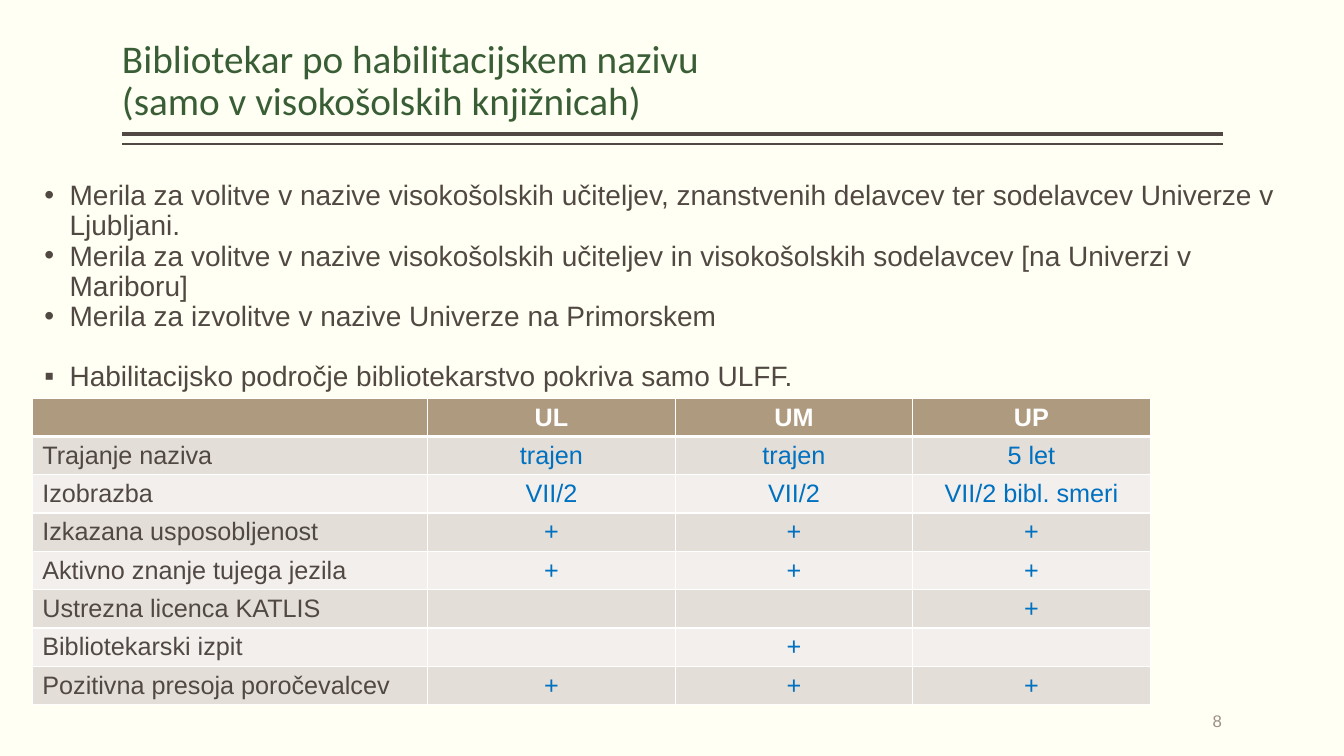
from lxml import etree
from pptx import Presentation
from pptx import util as u
from pptx.dml.color import RGBColor
from pptx.enum import shapes, text
from pptx.oxml import ns

INK, BLUE, WHITE = "514843", "0070C0", "FFFFFF"
LEFT, RIGHT = 1.21, 12.13


def style(para, size, color, font="Arial", bold=False):
    """Format every run of a paragraph."""
    for run in para.runs:
        run.font.size, run.font.name, run.font.bold = u.Pt(size), font, bold
        run.font.color.rgb = RGBColor.from_string(color)


def box(x, y, w, h, anchor):
    """Add a wrapping text box without side insets; return its frame."""
    frame = slide.shapes.add_textbox(*map(u.Inches, (x, y, w, h))).text_frame
    frame.word_wrap = True
    frame.margin_left = frame.margin_right = 0
    frame.vertical_anchor = anchor
    return frame


deck = Presentation()
deck.slide_width, deck.slide_height = u.Inches(13.33), u.Inches(7.5)
slide = deck.slides.add_slide(deck.slide_layouts[6])
back = slide.background.fill
back.solid()
back.fore_color.rgb = RGBColor.from_string("FFFFF3")

# Double rule under the title
for y, width in ((1.33, 3), (1.43, 1)):
    rule = slide.shapes.add_connector(
        shapes.MSO_CONNECTOR.STRAIGHT,
        u.Inches(RIGHT), u.Inches(y), u.Inches(LEFT), u.Inches(y))
    rule.line.width = u.Pt(width)
    rule.line.color.rgb = RGBColor.from_string(INK)
    etree.SubElement(rule._element.spPr, ns.qn("a:effectLst"))

title = box(LEFT, 0.08, RIGHT - LEFT, 1.2, text.MSO_ANCHOR.BOTTOM).paragraphs[0]
title.text = "Bibliotekar po habilitacijskem nazivu\v(samo v visokošolskih knjižnicah)"
title.line_spacing = 0.9
style(title, 28, "395E36", "Calibri")

# Bullets: mark, space before in points, wording
items = [
    ("•", 0, "Merila za volitve v nazive visokošolskih učiteljev, znanstvenih "
             "delavcev ter sodelavcev Univerze v Ljubljani."),
    ("•", 0, "Merila za volitve v nazive visokošolskih učiteljev in "
             "visokošolskih sodelavcev [na Univerzi v Mariboru]"),
    ("•", 0, "Merila za izvolitve v nazive Univerze na Primorskem"),
    ("▪", 21.6, "Habilitacijsko področje bibliotekarstvo pokriva samo ULFF."),
]
body = box(0.44, 1.75, 12.44, 1.9, text.MSO_ANCHOR.TOP)
for i, (mark, gap, words) in enumerate(items):
    para = body.add_paragraph() if i else body.paragraphs[0]
    para.text = words
    para.line_spacing, para.space_before = 0.9, u.Pt(gap)
    style(para, 20, INK)
    props = para._p.get_or_add_pPr()
    props.set("marL", str(u.Inches(0.25)))
    props.set("indent", str(-u.Inches(0.25)))
    etree.SubElement(props, ns.qn("a:buFont"), typeface="Arial")
    etree.SubElement(props, ns.qn("a:buChar"), char=mark)

page = box(RIGHT - 2.01, 6.95, 2, 0.4, text.MSO_ANCHOR.MIDDLE).paragraphs[0]
page.text = "8"
page.alignment = text.PP_ALIGN.RIGHT
style(page, 12, "9D8F88")

rows = [
    ("", "UL", "UM", "UP"),
    ("Trajanje naziva", "trajen", "trajen", "5 let"),
    ("Izobrazba", "VII/2", "VII/2", "VII/2 bibl. smeri"),
    ("Izkazana usposobljenost", "+", "+", "+"),
    ("Aktivno znanje tujega jezila", "+", "+", "+"),
    ("Ustrezna licenca KATLIS", "", "", "+"),
    ("Bibliotekarski izpit", "", "+", ""),
    ("Pozitivna presoja poročevalcev", "+", "+", "+"),
]
wide, high = (3.92, 2.46, 2.35, 2.36), 0.38
table = slide.shapes.add_table(
    len(rows), len(wide), u.Inches(0.32), u.Inches(3.95),
    u.Inches(sum(wide)), u.Inches(high * len(rows))).table
for col, w in zip(table.columns, wide):
    col.width = u.Inches(w)

for r, row in enumerate(rows):
    table.rows[r].height = u.Inches(high)
    for c, words in enumerate(row):
        cell = table.cell(r, c)
        cell.vertical_anchor = text.MSO_ANCHOR.MIDDLE
        cell.margin_top = cell.margin_bottom = u.Inches(0.04)
        para = cell.text_frame.paragraphs[0]
        para.text = words
        para.alignment = text.PP_ALIGN.CENTER if c else text.PP_ALIGN.LEFT
        style(para, 18, WHITE if r == 0 else BLUE if c else INK, bold=r == 0)
        props = cell._tc.get_or_add_tcPr()
        for side in "LRTB":
            thick = (r == 0 and side == "B") or (r == 1 and side == "T")
            edge = etree.SubElement(props, ns.qn(f"a:ln{side}"),
                                    w=str(u.Pt(3 if thick else 1)))
            fill = etree.SubElement(edge, ns.qn("a:solidFill"))
            etree.SubElement(fill, ns.qn("a:srgbClr"), val=WHITE)
        cell.fill.solid()
        shade = "AE9A7E" if r == 0 else "E3DED8" if r % 2 else "F2EFEC"
        cell.fill.fore_color.rgb = RGBColor.from_string(shade)

deck.save("out.pptx")
